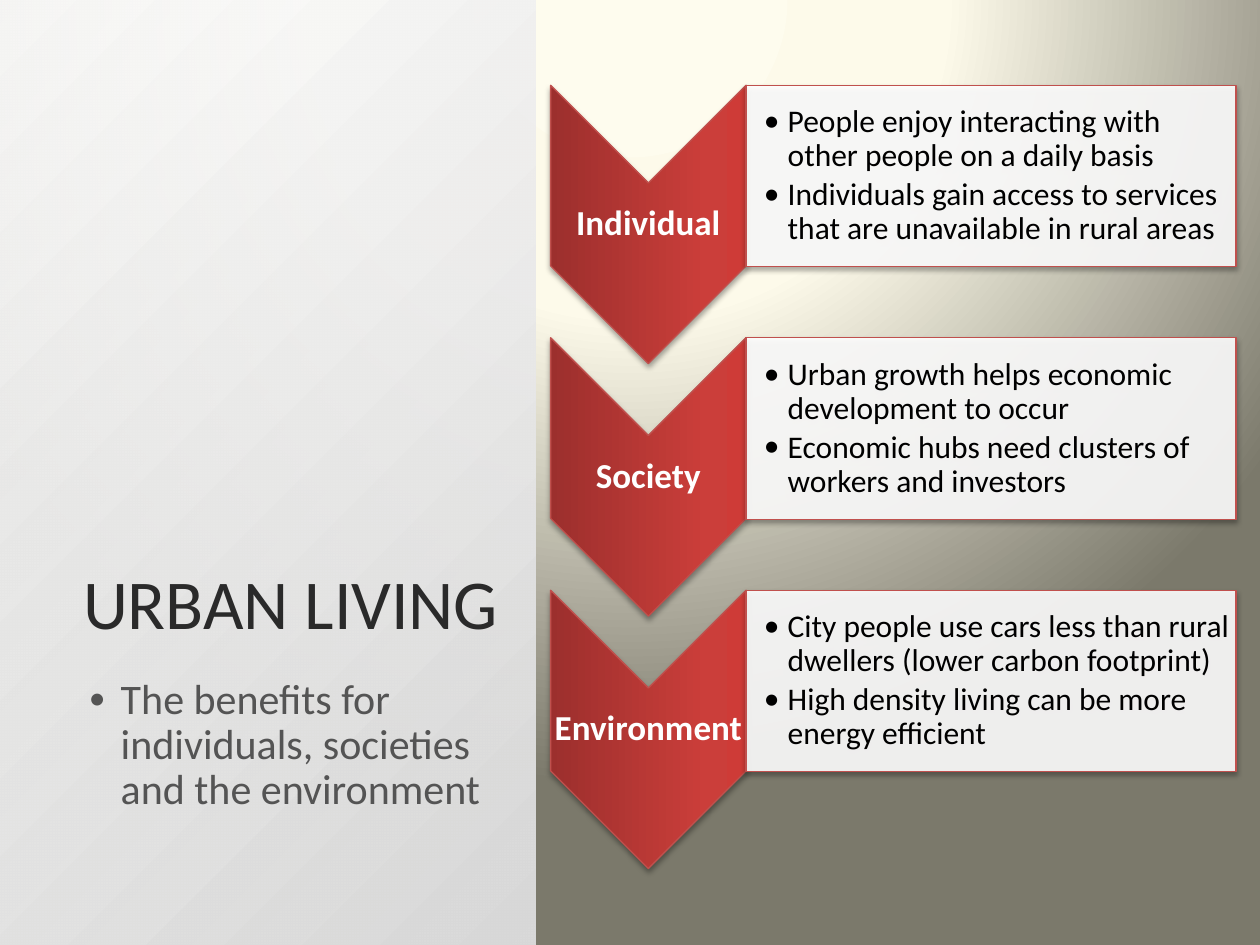
from dataclasses import dataclass

from lxml import etree
from pptx import Presentation
from pptx import util as u
from pptx.dml.color import RGBColor
from pptx.enum import shapes, text
from pptx.oxml import ns


@dataclass(frozen=True)
class Theme:
    font: str = "Calibri"
    title: str = "2A2A2A"
    subtitle: str = "545454"
    label: str = "FFFFFF"
    detail: str = "000000"
    card: str = "FFFFFF"
    outline: str = "C0504D"
    backdrop: tuple = ((0, "FEFCEE", 100), (40, "FDFAEA", 100), (100, "7B796B", 100))
    panel: tuple = ((0, "D9D9D9", 100), (100, "FFFFFF", 89))
    chevron: tuple = ((0, "9C2F2D", 100), (80, "CB3E3A", 100), (100, "CE3B37", 100))
    title_size: int = 40
    subtitle_size: int = 24
    label_size: int = 20
    detail_size: int = 18


theme = Theme()


def set_gradient(properties, stops, focus=None, angle=0):
    """Swap a solid fill for a circular (focus given) or linear gradient."""
    gradient = etree.Element(ns.qn("a:gradFill"), rotWithShape="1")
    stop_list = etree.SubElement(gradient, ns.qn("a:gsLst"))
    for position, colour, opacity in stops:
        stop = etree.SubElement(stop_list, ns.qn("a:gs"), pos=str(position * 1000))
        tint = etree.SubElement(stop, ns.qn("a:srgbClr"), val=colour)
        if opacity < 100:
            etree.SubElement(tint, ns.qn("a:alpha"), val=str(opacity * 1000))
    if focus:
        circle = etree.SubElement(gradient, ns.qn("a:path"))
        circle.set("path", "circle")
        edges = {side: str(value * 1000) for side, value in zip("ltrb", focus)}
        etree.SubElement(circle, ns.qn("a:fillToRect"), **edges)
    else:
        etree.SubElement(gradient, ns.qn("a:lin"), ang=str(angle * 60000), scaled="0")
    properties.replace(properties.find(ns.qn("a:solidFill")), gradient)


def write(paragraph, words, size, colour, bold=False, hang=None, bullet_size=100):
    """Add one run, with a hanging bullet when hang is given."""
    paragraph.line_spacing = 0.9
    run = paragraph.add_run()
    run.text = words
    run.font.name = theme.font
    run.font.size = u.Pt(size)
    run.font.bold = bold
    run.font.color.rgb = RGBColor.from_string(colour)
    if hang:
        properties = paragraph._p.get_or_add_pPr()
        properties.set("marL", str(hang[0]))
        properties.set("indent", str(-hang[1]))
        bullet_colour = etree.SubElement(properties, ns.qn("a:buClr"))
        etree.SubElement(bullet_colour, ns.qn("a:srgbClr"), val=colour)
        etree.SubElement(properties, ns.qn("a:buSzPct"), val=str(bullet_size * 1000))
        etree.SubElement(properties, ns.qn("a:buFont"), typeface=theme.font)
        etree.SubElement(properties, ns.qn("a:buChar"), char="•")


presentation = Presentation()
presentation.slide_width = u.Cm(25.4)
presentation.slide_height = u.Cm(19.05)
slide = presentation.slides.add_slide(presentation.slide_layouts[1])

# Background
slide.background.fill.solid()
set_gradient(slide.element.find(".//" + ns.qn("p:bgPr")), theme.backdrop, focus=(50, -80, 50, 180))

# Left panel, behind the placeholders
panel = slide.shapes.add_shape(
    shapes.MSO_SHAPE.RECTANGLE, 0, 0, u.Cm(10.8), presentation.slide_height)
panel.shadow.inherit = False
panel.line.fill.background()
panel.fill.solid()
set_gradient(panel.element.spPr, theme.panel, focus=(100, 100, 0, 0))
slide.shapes._spTree.insert(2, panel.element)

# Title
title = slide.shapes.title
title.left, title.top, title.width, title.height = u.Cm(1.42), u.Cm(1.9), u.Cm(9.47), u.Cm(11.23)
title.text_frame.auto_size = text.MSO_AUTO_SIZE.NONE
title.text_frame.vertical_anchor = text.MSO_ANCHOR.BOTTOM
paragraph = title.text_frame.paragraphs[0]
paragraph.alignment = text.PP_ALIGN.LEFT
write(paragraph, "URBAN LIVING", theme.title_size, theme.title)

# Subtitle list
body = slide.placeholders[1]
body.left, body.top, body.width, body.height = u.Cm(1.42), u.Cm(13.54), u.Cm(9.07), u.Cm(3.99)
body.text_frame.auto_size = text.MSO_AUTO_SIZE.NONE
paragraph = body.text_frame.paragraphs[0]
paragraph.space_before = u.Pt(18)
write(paragraph, "The benefits for individuals, societies and the environment",
      theme.subtitle_size, theme.subtitle, hang=(u.Cm(0.76), u.Cm(0.64)), bullet_size=80)

# Chevron list: one row per group of benefits
benefits = [
    ("Individual", ["People enjoy interacting with other people on a daily basis",
                    "Individuals gain access to services that are unavailable in rural areas"]),
    ("Society", ["Urban growth helps economic development to occur",
                 "Economic hubs need clusters of workers and investors"]),
    ("Environment", ["City people use cars less than rural dwellers (lower carbon footprint)",
                     "High density living can be more energy efficient"]),
]
first_top, row_pitch = u.Cm(1.72), u.Cm(5.09)
chevron_left, chevron_width, chevron_height = u.Cm(11.1), u.Cm(3.94), u.Cm(5.61)
card_width, card_height = u.Cm(9.88), u.Cm(3.66)
label_height = u.Cm(1.68)
turn_offset = (chevron_height - chevron_width) // 2
margin = u.Cm(0.03)

for row, (name, details) in enumerate(benefits):
    top = first_top + row * row_pitch

    # Chevron turned to point down, and the card beside it
    chevron = slide.shapes.add_shape(
        shapes.MSO_SHAPE.CHEVRON, chevron_left - turn_offset, top + turn_offset,
        chevron_height, chevron_width)
    chevron.rotation = 90
    card = slide.shapes.add_shape(
        shapes.MSO_SHAPE.RECTANGLE, chevron_left + chevron_width, top, card_width, card_height)
    for shape in (chevron, card):
        shape.fill.solid()
        shape.fill.fore_color.rgb = RGBColor.from_string(theme.card)
        shape.line.color.rgb = RGBColor.from_string(theme.outline)
        shape.line.width = u.Pt(0.75)
        shape.shadow.inherit = False
        effects = shape.element.spPr.find(ns.qn("a:effectLst"))
        shadow = etree.SubElement(
            effects, ns.qn("a:outerShdw"), blurRad=str(u.Pt(3.1)), dist=str(u.Pt(1.8)),
            dir="5400000", rotWithShape="0")
        shade = etree.SubElement(shadow, ns.qn("a:srgbClr"), val="000000")
        etree.SubElement(shade, ns.qn("a:alpha"), val="35000")
    set_gradient(chevron.element.spPr, theme.chevron, angle=270)
    card_colour = card.element.spPr.find(ns.qn("a:solidFill")).find(ns.qn("a:srgbClr"))
    etree.SubElement(card_colour, ns.qn("a:alpha"), val="90000")

    # Upright label over the chevron
    label = slide.shapes.add_textbox(
        chevron_left, top + (chevron_height - label_height) // 2, chevron_width, label_height)
    for shape in (label, card):
        frame = shape.text_frame
        frame.word_wrap = True
        frame.vertical_anchor = text.MSO_ANCHOR.MIDDLE
        frame.margin_left = frame.margin_right = margin
        frame.margin_top = frame.margin_bottom = margin
    paragraph = label.text_frame.paragraphs[0]
    paragraph.alignment = text.PP_ALIGN.CENTER
    write(paragraph, name, theme.label_size, theme.label, bold=True)

    # Bulleted details in the card
    frame = card.text_frame
    frame.margin_left = u.Cm(0.36)
    for index, detail in enumerate(details):
        paragraph = frame.add_paragraph() if index else frame.paragraphs[0]
        paragraph.alignment = text.PP_ALIGN.LEFT
        paragraph.space_after = u.Pt(2.7)
        write(paragraph, detail, theme.detail_size, theme.detail, hang=(u.Cm(0.48), u.Cm(0.48)))

presentation.save("out.pptx")
